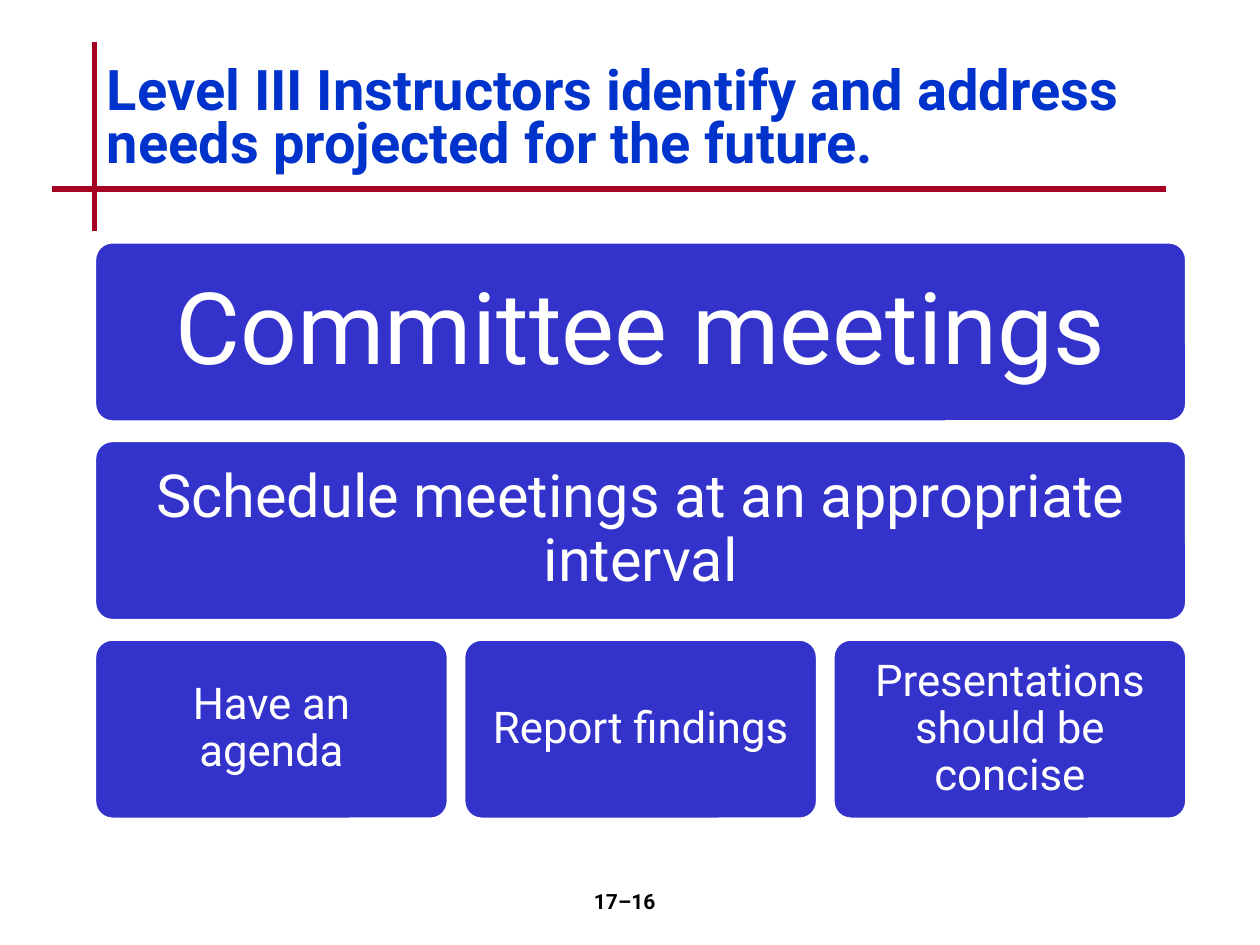
from dataclasses import dataclass

from lxml import etree
from pptx import Presentation
from pptx.dml.color import RGBColor
from pptx.enum.shapes import MSO_CONNECTOR, MSO_SHAPE
from pptx.enum.text import MSO_ANCHOR, PP_ALIGN
from pptx.oxml.ns import qn
from pptx.util import Pt

ROUND = MSO_SHAPE.ROUNDED_RECTANGLE
LINE = MSO_CONNECTOR.STRAIGHT
MIDDLE = MSO_ANCHOR.MIDDLE
TOP = MSO_ANCHOR.TOP
LEFT = PP_ALIGN.LEFT
CENTER = PP_ALIGN.CENTER

FONT = "Roboto"
RED = "A50021"
BLUE = "0033CC"
FILL = "3333CC"
WHITE = "FFFFFF"
BLACK = "000000"

EDGE = 54
START = 138.2
WIDTH = 624.2
HEIGHT = 103
PITCH = 113.5
GAP = 8.7


@dataclass
class Tier:
    labels: list[str]
    size: float
    inset: float


@dataclass
class Note:
    label: str
    box: tuple[float, float, float, float]
    size: float
    color: str
    align: PP_ALIGN
    anchor: MSO_ANCHOR
    pitch: float


TIERS = [
    Tier(["Committee meetings"], 57, 20),
    Tier(["Schedule meetings at an appropriate interval"], 34, 13),
    Tier(["Have an agenda", "Report findings", "Presentations should be concise"], 25, 10),
]
NOTES = [
    Note("Level III Instructors identify and address needs projected for the future.",
         (54, 24, 612, 90), 32, BLUE, LEFT, MIDDLE, 0.8),
    Note("17–16", (282, 504, 150, 36), 12, BLACK, CENTER, TOP, 1),
]
RULES = [(54, 24, 54, 132), (30, 108, 666, 108)]


def paint(code: str) -> RGBColor:
    return RGBColor.from_string(code)


def write(frame, label: str, size: float, color: str, align: PP_ALIGN,
          anchor: MSO_ANCHOR, pitch: float, bold: bool) -> None:
    frame.word_wrap = True
    frame.vertical_anchor = anchor
    para = frame.paragraphs[0]
    para.text = label
    para.alignment = align
    para.line_spacing = pitch
    font = para.font
    font.name = FONT
    font.size = Pt(size)
    font.bold = bold
    font.color.rgb = paint(color)


def draw_rule(slide, ends: tuple[float, ...]) -> None:
    rule = slide.shapes.add_connector(LINE, *map(Pt, ends))
    rule.line.color.rgb = paint(RED)
    rule.line.width = Pt(3)
    etree.SubElement(rule._element.spPr, qn("a:effectLst"))


def draw_tier(slide, tier: Tier, top: float) -> None:
    count = len(tier.labels)
    width = (WIDTH - GAP * (count - 1)) / count
    for col, label in enumerate(tier.labels):
        left = EDGE + col * (width + GAP)
        card = slide.shapes.add_shape(ROUND, Pt(left), Pt(top), Pt(width), Pt(HEIGHT))
        card.adjustments[0] = 0.1
        card.shadow.inherit = False
        card.fill.solid()
        card.fill.fore_color.rgb = paint(FILL)
        card.line.color.rgb = paint(WHITE)
        card.line.width = Pt(2)
        frame = card.text_frame
        frame.margin_left = frame.margin_right = Pt(tier.inset)
        frame.margin_top = frame.margin_bottom = Pt(tier.inset)
        write(frame, label, tier.size, WHITE, CENTER, MIDDLE, 0.9, False)


def draw_note(slide, note: Note) -> None:
    box = slide.shapes.add_textbox(*map(Pt, note.box))
    write(box.text_frame, note.label, note.size, note.color, note.align,
          note.anchor, note.pitch, True)


def main() -> None:
    deck = Presentation()
    deck.slide_width = Pt(720)
    deck.slide_height = Pt(540)
    slide = deck.slides.add_slide(deck.slide_layouts[6])
    for ends in RULES:
        draw_rule(slide, ends)
    for row, tier in enumerate(TIERS):
        draw_tier(slide, tier, START + row * PITCH)
    for note in NOTES:
        draw_note(slide, note)
    deck.save("out.pptx")


if __name__ == "__main__":
    main()
